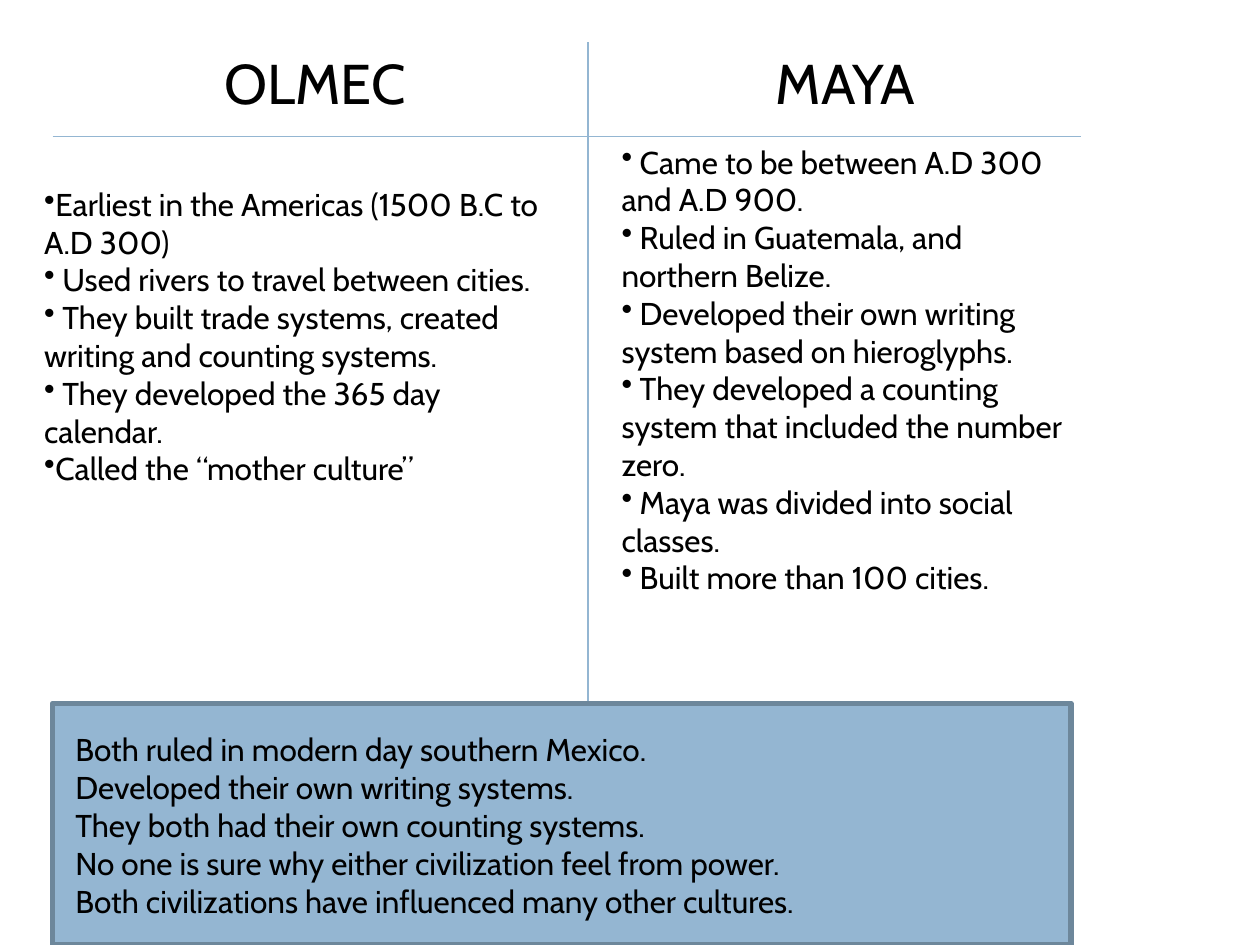
"""Build a slide that compares the Olmec and the Maya."""
import pptx
import pptx.util
import pptx.dml.color
import pptx.enum.shapes
import pptx.enum.text
import pptx.oxml
import pptx.oxml.ns

Cm = pptx.util.Cm
Pt = pptx.util.Pt
RGB = pptx.dml.color.RGBColor.from_string
align = pptx.enum.text.PP_ALIGN

theme = {
    "font": "Cabin",
    "ink": RGB("000000"),
    "blue": RGB("94B6D2"),
    "edge": RGB("6D879B"),
    "title": Pt(32),
    "body": Pt(18),
    "rule": Pt(0.9),
    "frame": Pt(3.15),
}

deck = pptx.Presentation()
deck.slide_width, deck.slide_height = Cm(25.4), Cm(19.05)
slide = deck.slides.add_slide(deck.slide_layouts[6])
shapes = slide.shapes


def add_text(place, lines, size, side=align.LEFT, mark=None):
    box = shapes.add_textbox(*map(Cm, place))
    frame = box.text_frame
    frame.word_wrap = True
    frame.auto_size = pptx.enum.text.MSO_AUTO_SIZE.SHAPE_TO_FIT_TEXT
    look = {"name": theme["font"], "size": size}
    for spot, line in enumerate(lines):
        para = frame.add_paragraph() if spot else frame.paragraphs[0]
        para.alignment = side
        if mark:
            props = para._p.get_or_add_pPr()
            props.set("marL", "0")
            props.set("indent", "0")
            bullet = pptx.oxml.parse_xml(
                f'<a:buChar {pptx.oxml.ns.nsdecls("a")} char="{mark}"/>')
            props.append(bullet)
        run = para.add_run()
        run.text = line
        for key, value in look.items():
            setattr(run.font, key, value)
        run.font.color.rgb = theme["ink"]


rules = [
    (1.06, 2.75, 21.8, 2.75),
    (11.85, 0.85, 11.85, 19.05),
]
for ends in rules:
    rule = shapes.add_connector(
        pptx.enum.shapes.MSO_CONNECTOR.STRAIGHT, *map(Cm, ends))
    rule.line.color.rgb = theme["blue"]
    rule.line.width = theme["rule"]
    rule._element.spPr.append(pptx.oxml.parse_xml(
        f'<a:effectLst {pptx.oxml.ns.nsdecls("a")}/>'))

panel = shapes.add_shape(
    pptx.enum.shapes.MSO_SHAPE.RECTANGLE,
    Cm(1.06), Cm(14.18), Cm(20.53), Cm(4.87))
panel.shadow.inherit = False
panel.fill.solid()
panel.fill.fore_color.rgb = theme["blue"]
panel.line.color.rgb = theme["edge"]
panel.line.width = theme["frame"]

facts = [
    ((0.64, 3.6, 10.8, 7.2), [
        "Earliest in the Americas (1500 B.C to A.D 300)",
        " Used rivers to travel between cities.",
        " They built trade systems, created writing and counting systems.",
        " They developed the 365 day calendar.",
        "Called the “mother culture”",
    ]),
    ((12.28, 2.75, 9.74, 10.26), [
        " Came to be between A.D 300 and A.D 900.",
        " Ruled in Guatemala, and northern Belize.",
        " Developed their own writing system based on hieroglyphs.",
        " They developed a counting system that included the number zero.",
        " Maya was divided into social classes.",
        " Built more than 100 cities.",
    ]),
]
for place, lines in facts:
    add_text(place, lines, theme["body"], mark="•")

shared = [
    "Both ruled in modern day southern Mexico.",
    "Developed their own writing systems.",
    "They both had their own counting systems.",
    "No one is sure why either civilization feel from power.",
    "Both civilizations have influenced many other cultures.",
]
add_text((1.27, 14.6, 19.69, 4.11), shared, theme["body"])

heads = [
    ((0.85, 0.85, 11, 1.62), "OLMEC"),
    ((12.28, 0.85, 9.53, 1.62), "MAYA"),
]
for place, name in heads:
    add_text(place, [name], theme["title"], align.CENTER)

deck.save("out.pptx")
